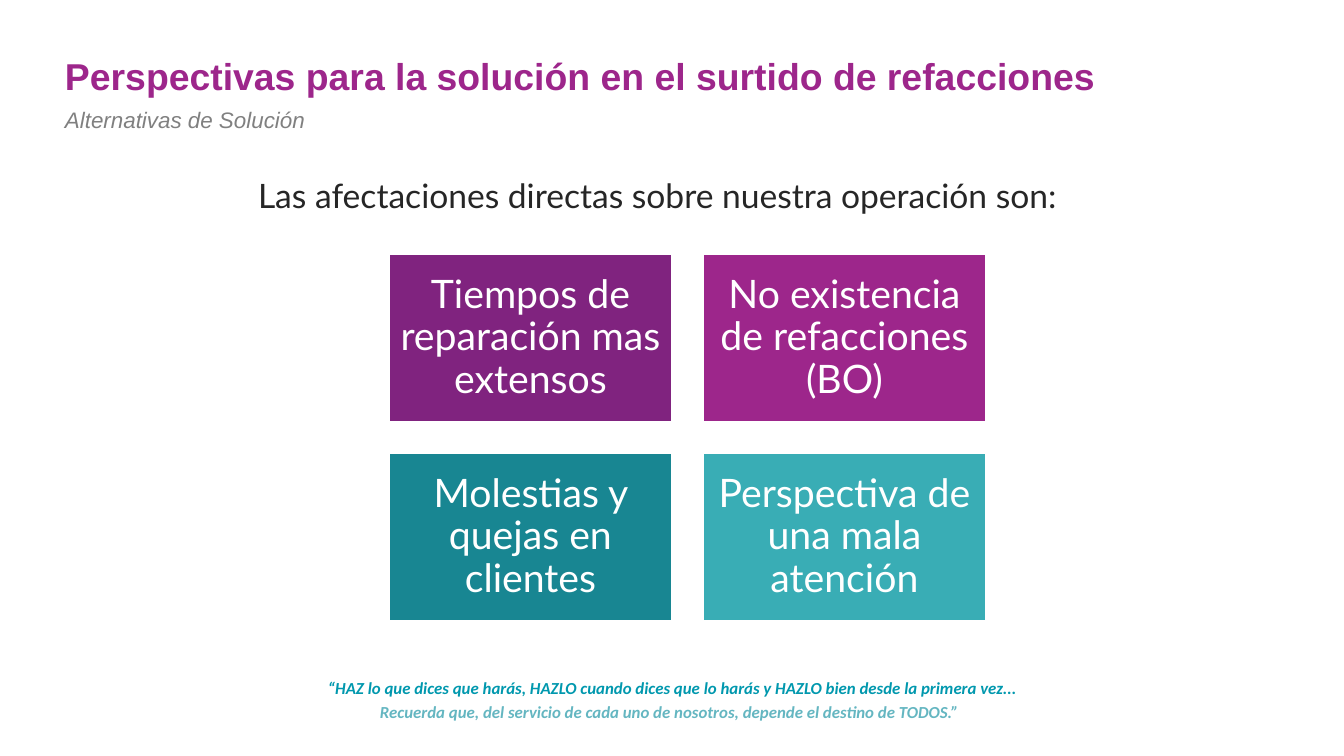
import pptx
import pptx.util
import pptx.dml.color
import pptx.enum.shapes
import pptx.enum.text

RGB = pptx.dml.color.RGBColor
ALIGN = pptx.enum.text.PP_ALIGN
ANCHOR = pptx.enum.text.MSO_ANCHOR
Pt = pptx.util.Pt

PURPLE = RGB(0x80, 0x23, 0x7F)
MAGENTA = RGB(0x9D, 0x26, 0x8B)
DARK_TEAL = RGB(0x18, 0x86, 0x92)
TEAL = RGB(0x39, 0xAD, 0xB5)
QUOTE_BLUE = RGB(0x00, 0x98, 0xAE)
QUOTE_PALE = RGB(0x64, 0xB6, 0xC1)
GRAY = RGB(0x80, 0x80, 0x80)
INK = RGB(0x26, 0x26, 0x26)
WHITE = RGB(0xFF, 0xFF, 0xFF)

EMU_PER_PX = 914400 / 134.4

# Formats: font, paragraph, anchor and (horizontal, vertical) insets in px
HEADER = {"anchor": ANCHOR.MIDDLE, "insets": (5, 3),
          "paragraph": {"alignment": ALIGN.LEFT}}
QUOTE = {"anchor": ANCHOR.TOP, "insets": (7, 7),
         "paragraph": {"alignment": ALIGN.CENTER, "space_before": Pt(7)}}
INTRO = {"anchor": ANCHOR.TOP, "insets": (13, 7),
         "paragraph": {"alignment": ALIGN.JUSTIFY}}
CARD = {"anchor": ANCHOR.MIDDLE, "insets": (11, 11),
        "paragraph": {"alignment": ALIGN.CENTER, "line_spacing": 0.9}}
CARD_FONT = {"name": "Lato", "size": Pt(21)}
QUOTE_FONT = {"name": "Calibri", "size": Pt(9), "bold": True, "italic": True}

# Content: text, (left, top, width, height) in px, format, font, colour
texts = [
    ("Perspectivas para la solución en el surtido de refacciones",
     (60, 50, 1107, 51), HEADER,
     {"name": "Arial", "size": Pt(20), "bold": True}, MAGENTA),
    ("Alternativas de Solución", (60, 101, 398, 38), HEADER,
     {"name": "Arial", "size": Pt(12), "italic": True}, GRAY),
    ("Las afectaciones directas sobre nuestra operación son:",
     (245, 168, 864, 54), INTRO, {"name": "Lato", "size": Pt(18)}, INK),
    ("“HAZ lo que dices que harás, HAZLO cuando dices que lo harás y HAZLO "
     "bien desde la primera vez...",
     (313, 671, 718, 30), QUOTE, QUOTE_FONT, QUOTE_BLUE),
    ("Recuerda que, del servicio de cada uno de nosotros, depende el destino "
     "de TODOS.”",
     (310, 695, 718, 44), QUOTE, QUOTE_FONT, QUOTE_PALE),
]
effects = [
    ("Tiempos de reparación mas extensos", PURPLE),
    ("No existencia de refacciones (BO)", MAGENTA),
    ("Molestias y quejas en clientes", DARK_TEAL),
    ("Perspectiva de una mala atención", TEAL),
]

GRID_LEFT, GRID_TOP = 388, 253
CARD_WIDTH, CARD_HEIGHT = 285, 170
GRID_GAP = 29
COLUMNS = 2


def px(length):
    return pptx.util.Emu(round(length * EMU_PER_PX))


def set_all(target, values):
    for name, value in values.items():
        setattr(target, name, value)


def write(shape, text, style, font, color):
    across, down = style["insets"]
    frame = shape.text_frame
    set_all(frame, {
        "word_wrap": True, "vertical_anchor": style["anchor"],
        "margin_left": px(across), "margin_right": px(across),
        "margin_top": px(down), "margin_bottom": px(down)})
    paragraph = frame.paragraphs[0]
    set_all(paragraph, style["paragraph"])
    run = paragraph.add_run()
    run.text = text
    set_all(run.font, font)
    run.font.color.rgb = color


deck = pptx.Presentation()
set_all(deck, {"slide_width": px(1344), "slide_height": px(756)})
slide = deck.slides.add_slide(deck.slide_layouts[6])

# Title, subtitle, introduction and closing quote
for text, box, style, font, color in texts:
    write(slide.shapes.add_textbox(*map(px, box)), text, style, font, color)

# Grid of effects
for index, (effect, color) in enumerate(effects):
    row, column = divmod(index, COLUMNS)
    card = slide.shapes.add_shape(
        pptx.enum.shapes.MSO_SHAPE.RECTANGLE,
        px(GRID_LEFT + column * (CARD_WIDTH + GRID_GAP)),
        px(GRID_TOP + row * (CARD_HEIGHT + GRID_GAP)),
        px(CARD_WIDTH), px(CARD_HEIGHT))
    card.shadow.inherit = False
    card.fill.solid()
    card.fill.fore_color.rgb = color
    card.line.color.rgb = WHITE
    card.line.width = Pt(2)
    write(card, effect, CARD, CARD_FONT, WHITE)

deck.save("out.pptx")
